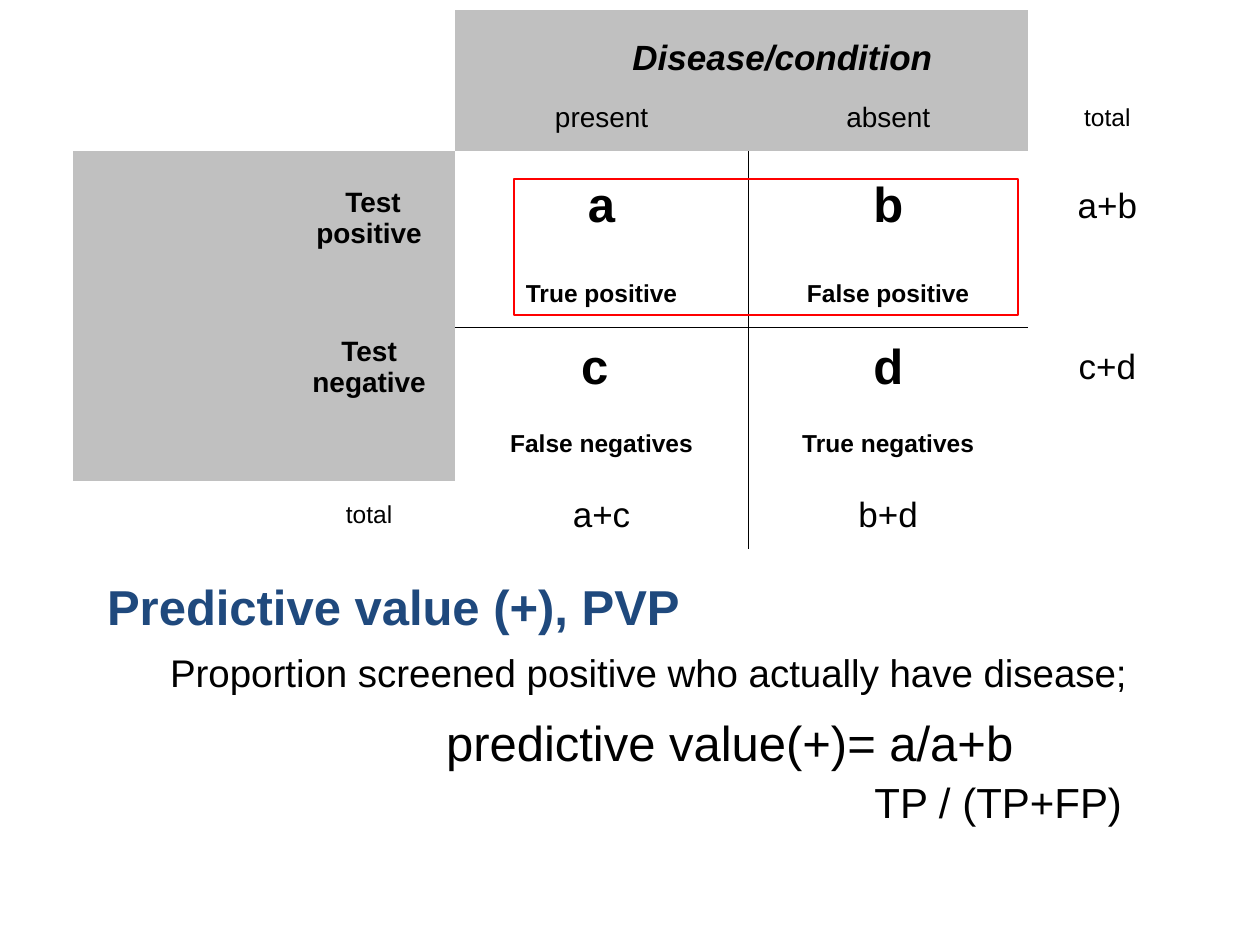
from lxml import etree
from pptx import Presentation
from pptx.dml.color import RGBColor
from pptx.enum.shapes import MSO_SHAPE
from pptx.enum.text import MSO_ANCHOR, PP_ALIGN
from pptx.oxml.ns import qn
from pptx.util import Inches, Pt

CENTER, LEFT = PP_ALIGN.CENTER, PP_ALIGN.LEFT
MIDDLE, BOTTOM = MSO_ANCHOR.MIDDLE, MSO_ANCHOR.BOTTOM
RECT = MSO_SHAPE.RECTANGLE
NO_STYLE = "{2D5ABB26-0587-4C30-8999-92F81FD0307C}"
COLORS = {"text": "000000", "heading": "1F497D", "band": "C0C0C0", "frame": "FF0000"}


def add_plain_table(slide, left, top, cols, rows):
    """Add a table with no style, no fills and the given column and row sizes."""
    table = slide.shapes.add_table(len(rows), len(cols), Inches(left), Inches(top),
                                   Inches(sum(cols)), Inches(sum(rows))).table
    table.first_row = table.horz_banding = False
    table._tbl.tblPr.find(qn("a:tableStyleId")).text = NO_STYLE
    for col, width in zip(table.columns, cols):
        col.width = Inches(width)
    for row, height in zip(table.rows, rows):
        row.height = Inches(height)
    for cell in table.iter_cells():
        cell.fill.background()
    return table


def write(p, text, size, bold=False, italic=False, color="text", align=CENTER, indent=0):
    p.text = text
    p.alignment = align
    if indent:
        pPr = p._p.get_or_add_pPr()
        pPr.set("marL", str(Inches(indent)))
        pPr.set("indent", "0")
    font = p.runs[0].font
    font.name, font.size, font.bold, font.italic = "Arial", Pt(size), bold, italic
    font.color.rgb = RGBColor.from_string(COLORS[color])


prs = Presentation()
prs.slide_width, prs.slide_height = Inches(10), Inches(7.5)
s = prs.slides.add_slide(prs.slide_layouts[6])

# Two-by-two table: (row, column, text, size, bold)
grid = add_plain_table(s, 0.58, 0.08, [1.67, 1.36, 2.33, 2.22, 1.26],
                       [0.59, 0.53, 0.87, 0.53, 0.63, 0.59, 0.54])
entries = [
    (1, 2, "present", 16, False), (1, 3, "absent", 16, False), (1, 4, "total", 14, False),
    (2, 1, " Test positive", 16, True), (2, 2, "a", 28, True), (2, 3, "b", 28, True),
    (2, 4, "a+b", 20, False),
    (3, 2, "True positive", 14, True), (3, 3, "False positive", 14, True),
    (4, 1, "Test negative", 16, True), (4, 2, "c ", 28, True), (4, 3, "d", 28, True),
    (4, 4, "c+d", 20, False),
    (5, 2, "False negatives", 14, True), (5, 3, "True negatives", 14, True),
    (6, 1, "total", 14, False), (6, 2, "a+c", 20, False), (6, 3, "b+d", 20, False),
]
for row, col, text, size, bold in entries:
    cell = grid.cell(row, col)
    cell.vertical_anchor = MIDDLE
    write(cell.text_frame.paragraphs[0], text, size, bold)
grid.cell(2, 1).margin_top = Inches(0.25)

header = grid.cell(0, 2)
header.merge(grid.cell(0, 3))
header.vertical_anchor = BOTTOM
header.margin_left = Inches(1.41)
write(header.text_frame.paragraphs[0], "Disease/condition", 20, True, True, align=LEFT)

band = [(r, c) for r in (0, 1) for c in (2, 3)] + [(r, c) for r in range(2, 6) for c in (0, 1)]
for row, col in band:
    fill = grid.cell(row, col).fill
    fill.solid()
    fill.fore_color.rgb = RGBColor.from_string(COLORS["band"])

# Inner cross of the table; every other border is switched off
for row in range(7):
    for col in range(5):
        inner = col in (2, 3)
        borders = {
            "a:lnL": col == 3 and row >= 2,
            "a:lnR": col == 2 and row >= 2,
            "a:lnT": inner and row == 4,
            "a:lnB": inner and row == 3,
        }
        tcPr = grid.cell(row, col)._tc.get_or_add_tcPr()
        for i, (side, drawn) in enumerate(borders.items()):
            ln = etree.Element(qn(side), w=str(Pt(1)))
            paint = etree.SubElement(ln, qn("a:solidFill" if drawn else "a:noFill"))
            if drawn:
                etree.SubElement(paint, qn("a:srgbClr"), val=COLORS["text"])
            tcPr.insert(i, ln)

# Definition and formula
notes = add_plain_table(s, 0.75, 4.5, [8.5], [0.6, 0.47, 1.05, 0.57, 0.57, 0.43])
for cell in notes.iter_cells():
    cell.vertical_anchor = BOTTOM
heading, definition, formula = [notes.cell(row, 0).text_frame for row in range(3)]
write(heading.paragraphs[0], "Predictive value (+), PVP", 28, True, color="heading", align=LEFT)
write(definition.paragraphs[0], "Proportion screened positive who actually have disease;", 22,
      align=LEFT, indent=0.5)
write(formula.paragraphs[0], "predictive value(+)= a/a+b", 28, align=LEFT, indent=2.69)
p = formula.add_paragraph()
write(p, "TP / (TP+FP)", 24, align=LEFT, indent=6.09)
p.space_before = Pt(5)

# Frame around the test-positive row
sp = s.shapes.add_shape(RECT, Inches(4.08), Inches(1.42), Inches(4), Inches(1.08))
sp.shadow.inherit = False
sp.fill.background()
sp.line.color.rgb = RGBColor.from_string(COLORS["frame"])
sp.line.width = Pt(0.75)

prs.save("out.pptx")
